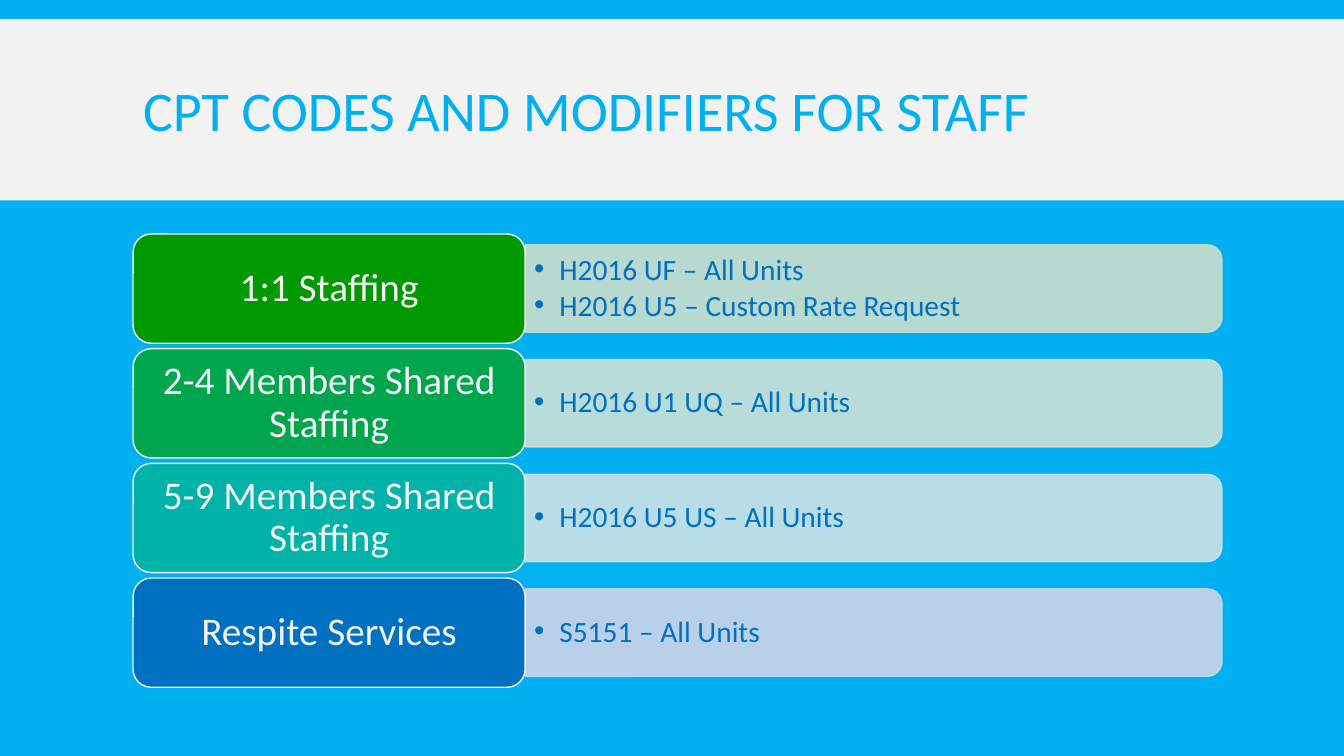
from dataclasses import dataclass

from pptx import Presentation
from pptx.dml.color import RGBColor
from pptx.enum.shapes import MSO_SHAPE as Shape
from pptx.enum.text import MSO_ANCHOR as Anchor, PP_ALIGN as Align
from pptx.oxml import parse_xml
from pptx.oxml.ns import nsdecls, qn
from pptx.shapes.autoshape import Shape as AutoShape
from pptx.slide import Slide
from pptx.text.text import TextFrame
from pptx.util import Emu, Inches, Pt


@dataclass(frozen=True)
class Theme:
    font: str = "Calibri"
    sky: str = "00B0F0"
    pale: str = "F2F2F2"
    blue: str = "0070C0"
    title_pt: int = 40
    label_pt: int = 28
    detail_pt: int = 21
    line_pt: int = 1
    bar_opacity: int = 90


@dataclass(frozen=True)
class Box:
    x: float
    y: float
    w: float
    h: float

    def emu(self) -> tuple[Emu, Emu, Emu, Emu]:
        return (Emu(round(self.x * W / 100)), Emu(round(self.y * H / 100)),
                Emu(round(self.w * W / 100)), Emu(round(self.h * H / 100)))


@dataclass(frozen=True)
class Staffing:
    label: str
    codes: tuple[str, ...]
    color: str
    tint: str


THEME = Theme()
W, H = Inches(13.333), Inches(7.5)

BAND = Box(0, 2.53, 100, 24)
TITLE = Box(9.9, 4.13, 80.25, 22)
LEFT, TOP, PITCH = 9.9, 30.95, 15.17
LABEL_W, LABEL_H = 29.17, 14.45
BAR_W, BAR_H = 51.85, 11.56

ROWS = (
    Staffing("1:1 Staffing",
             ("H2016 UF – All Units", "H2016 U5 – Custom Rate Request"),
             "009900", "CCDECC"),
    Staffing("2-4 Members Shared Staffing", ("H2016 U1 UQ – All Units",),
             "00A64E", "CCE1D8"),
    Staffing("5-9 Members Shared Staffing", ("H2016 U5 US – All Units",),
             "00B3A9", "CCE2E5"),
    Staffing("Respite Services", ("S5151 – All Units",), THEME.blue, "CCD5E8"),
)


def rgb(color: str) -> RGBColor:
    return RGBColor.from_string(color)


def add_box(s: Slide, kind: Shape, box: Box, fill: str, line: str | None = None) -> AutoShape:
    sp = s.shapes.add_shape(kind, *box.emu())
    sp.shadow.inherit = False
    sp.fill.solid()
    sp.fill.fore_color.rgb = rgb(fill)
    if line:
        sp.line.color.rgb = rgb(line)
        sp.line.width = Pt(THEME.line_pt)
    else:
        sp.line.fill.background()
    return sp


def write(tf: TextFrame, lines: tuple[str, ...], size: int, color: str,
          align: Align, spacing: float, inset: tuple[float, float], after: float = 0) -> None:
    tf.word_wrap = True
    tf.vertical_anchor = Anchor.MIDDLE
    tf.margin_left = tf.margin_right = Inches(inset[0])
    tf.margin_top = tf.margin_bottom = Inches(inset[1])
    for i, line in enumerate(lines):
        p = tf.add_paragraph() if i else tf.paragraphs[0]
        p.alignment = align
        p.line_spacing = spacing
        p.space_before = Pt(0)
        p.space_after = Pt(after)
        r = p.add_run()
        r.text = line
        r.font.name = THEME.font
        r.font.size = Pt(size)
        r.font.color.rgb = rgb(color)


def add_bullets(tf: TextFrame) -> None:
    for p in tf.paragraphs:
        pr = p._p.get_or_add_pPr()
        pr.set("marL", str(Inches(0.25)))
        pr.set("indent", str(-Inches(0.25)))
        pr.append(parse_xml(f'<a:buFont {nsdecls("a")} typeface="Arial"/>'))
        pr.append(parse_xml(f'<a:buChar {nsdecls("a")} char="•"/>'))


def add_bar(s: Slide, box: Box, tint: str) -> None:
    sp = add_box(s, Shape.ROUND_2_SAME_RECTANGLE, box, tint, tint)
    x, y, w, h = box.emu()
    sp.left, sp.top = Emu(x + (w - h) // 2), Emu(y + (h - w) // 2)
    sp.width, sp.height = h, w
    sp.rotation = 90
    opacity = f'<a:alpha {nsdecls("a")} val="{THEME.bar_opacity * 1000}"/>'
    for clr in sp._element.spPr.iter(qn("a:srgbClr")):
        clr.append(parse_xml(opacity))


def add_row(s: Slide, row: Staffing, y: float) -> None:
    bar = Box(LEFT + LABEL_W, y + (LABEL_H - BAR_H) / 2, BAR_W, BAR_H)
    add_bar(s, bar, row.tint)
    tf = s.shapes.add_textbox(*bar.emu()).text_frame
    write(tf, row.codes, THEME.detail_pt, THEME.blue, Align.LEFT, 0.9, (0.09, 0.04), 3.15)
    add_bullets(tf)
    label = add_box(s, Shape.ROUNDED_RECTANGLE, Box(LEFT, y, LABEL_W, LABEL_H),
                    row.color, THEME.pale)
    write(label.text_frame, (row.label,), THEME.label_pt, THEME.pale,
          Align.CENTER, 0.9, (0.12, 0.06))


def add_title(s: Slide, text: str) -> None:
    band = add_box(s, Shape.RECTANGLE, BAND, THEME.pale)
    s.shapes._spTree.insert(2, band._element)
    title = s.shapes.title
    title.left, title.top, title.width, title.height = TITLE.emu()
    write(title.text_frame, (text,), THEME.title_pt, THEME.sky, Align.LEFT, 0.85, (0.1, 0.05))


def main() -> None:
    prs = Presentation()
    prs.slide_width, prs.slide_height = W, H
    s = prs.slides.add_slide(prs.slide_layouts.get_by_name("Title Only"))
    s.background.fill.solid()
    s.background.fill.fore_color.rgb = rgb(THEME.sky)
    add_title(s, "CPT CODES AND MODIFIERS FOR STAFF")
    for i, row in enumerate(ROWS):
        add_row(s, row, TOP + i * PITCH)
    prs.save("out.pptx")


if __name__ == "__main__":
    main()
